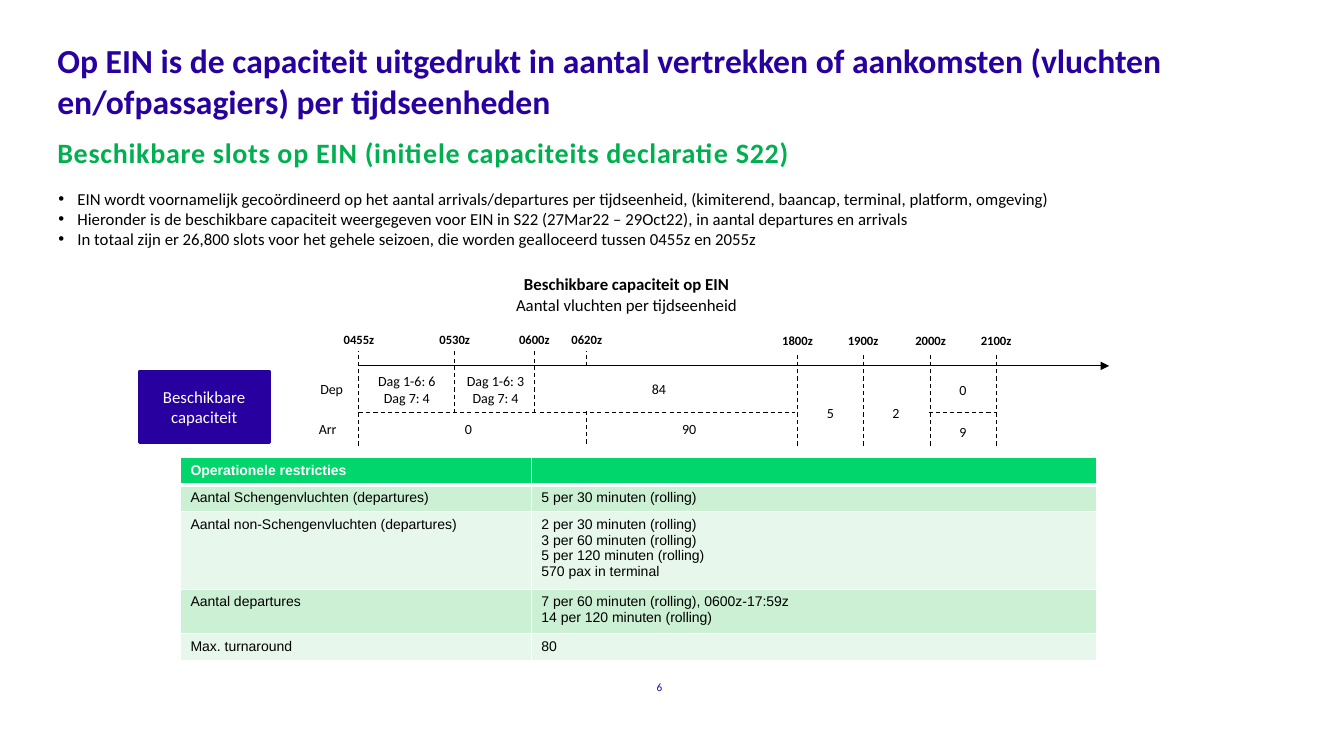
from lxml import etree
from pptx import Presentation
from pptx.dml.color import RGBColor
from pptx.enum.dml import MSO_LINE
from pptx.enum.shapes import MSO_CONNECTOR, MSO_SHAPE
from pptx.enum.text import MSO_ANCHOR, PP_ALIGN
from pptx.oxml.ns import qn
from pptx.util import Inches, Pt

LEFT, CENTER = PP_ALIGN.LEFT, PP_ALIGN.CENTER
TOP, MIDDLE = MSO_ANCHOR.TOP, MSO_ANCHOR.MIDDLE
DASH = MSO_LINE.DASH
STRAIGHT = MSO_CONNECTOR.STRAIGHT
RECTANGLE = MSO_SHAPE.RECTANGLE

INDIGO = RGBColor(0x28, 0x00, 0xA0)
GREEN = RGBColor(0x00, 0xB0, 0x50)
HEADER_GREEN = RGBColor(0x00, 0xD6, 0x6C)
BAND_DARK = RGBColor(0xCC, 0xF0, 0xD4)
BAND_LIGHT = RGBColor(0xE7, 0xF7, 0xEB)
BLACK = RGBColor(0x00, 0x00, 0x00)
WHITE = RGBColor(0xFF, 0xFF, 0xFF)

presentation = Presentation()
presentation.slide_width = Inches(13.33)
presentation.slide_height = Inches(7.5)
slide = presentation.slides.add_slide(presentation.slide_layouts[6])


def add_text(text, left, top, width, height, size=10, color=BLACK,
             bold=False, align=CENTER, anchor=TOP):
    box = slide.shapes.add_textbox(Inches(left), Inches(top), Inches(width), Inches(height))
    frame = box.text_frame
    frame.word_wrap = True
    frame.vertical_anchor = anchor
    frame.text = text
    for paragraph in frame.paragraphs:
        paragraph.alignment = align
        for run in paragraph.runs:
            run.font.name = "Calibri"
            run.font.size = Pt(size)
            run.font.bold = bold
            run.font.color.rgb = color
    return frame


def add_line(x1, y1, x2, y2, dashed=True):
    line = slide.shapes.add_connector(STRAIGHT, Inches(x1), Inches(y1), Inches(x2), Inches(y2))
    line.line.color.rgb = BLACK
    line.line.width = Pt(0.75)
    if dashed:
        line.line.dash_style = DASH
    etree.SubElement(line._element.spPr, qn("a:effectLst"))
    return line


# Title, subtitle and page number
add_text("Op EIN is de capaciteit uitgedrukt in aantal vertrekken of aankomsten "
         "(vluchten en/ofpassagiers) per tijdseenheden",
         0.47, 0.35, 12.39, 0.92, 24, INDIGO, True, LEFT)
subtitle = add_text("Beschikbare slots op EIN (initiele capaciteits declaratie S22)",
                    0.47, 1.28, 11.02, 0.4, 20, GREEN, True, LEFT, MIDDLE)
subtitle.margin_top = subtitle.margin_bottom = 0
subtitle.paragraphs[0].line_spacing = Pt(28.5)
subtitle.paragraphs[0].runs[0].font._element.set("spc", "50")
add_text("6", 5.59, 6.67, 1.9, 0.3, 8, INDIGO, anchor=MIDDLE)

# Bullets
bullets = add_text(
    "EIN wordt voornamelijk gecoördineerd op het aantal arrivals/departures per tijdseenheid, "
    "(kimiterend, baancap, terminal, platform, omgeving)\n"
    "Hieronder is de beschikbare capaciteit weergegeven voor EIN in S22 (27Mar22 – 29Oct22), "
    "in aantal departures en arrivals\n"
    "In totaal zijn er 26,800 slots voor het gehele seizoen, die worden gealloceerd "
    "tussen 0455z en 2055z",
    0.48, 1.82, 12.37, 0.71, 12, align=LEFT)
for paragraph in bullets.paragraphs:
    properties = paragraph._p.get_or_add_pPr()
    properties.set("marL", str(Inches(0.19)))
    properties.set("indent", str(-Inches(0.19)))
    etree.SubElement(properties, qn("a:buFont"), typeface="Arial")
    etree.SubElement(properties, qn("a:buChar"), char="•")

# Timeline heading
heading = add_text("Beschikbare capaciteit op EIN\nAantal vluchten per tijdseenheid",
                   4.91, 2.72, 2.61, 0.4, 12)
heading.margin_left = heading.margin_right = heading.margin_top = heading.margin_bottom = 0
heading.paragraphs[0].runs[0].font.bold = True

# Time axis
axis = add_line(3.56, 3.63, 11, 3.63, dashed=False)
etree.SubElement(axis.line._get_or_add_ln(), qn("a:tailEnd"), type="triangle")

# Time marks: label, x, label top, bottom of the dashed line
time_marks = [
    ("0455z", 3.56, 3.24, 4.42), ("0530z", 4.51, 3.24, 4.1),
    ("0600z", 5.3, 3.24, 4.1), ("0620z", 5.82, 3.24, 3.63),
    ("1800z", 7.91, 3.25, 4.42), ("1900z", 8.56, 3.25, 4.42),
    ("2000z", 9.23, 3.25, 4.42), ("2100z", 9.88, 3.25, 4.42),
]
for label, x, label_top, line_bottom in time_marks:
    add_text(label, x - 0.77, label_top, 1.54, 0.25, 9, bold=True)
    add_line(x, line_bottom, x, label_top + 0.24)

# Lines between departures and arrivals
add_line(5.82, 4.4, 5.82, 4.08)
add_line(3.56, 4.09, 7.89, 4.09)
add_line(9.21, 4.09, 9.88, 4.09)

# Capacity values: text, left, top, width
capacity_values = [
    ("Dep", 3.02, 3.73, 0.54), ("Arr", 2.98, 4.12, 0.54),
    ("Dag 1-6: 6\nDag 7: 4", 3.28, 3.65, 1.51),
    ("Dag 1-6: 3\nDag 7: 4", 4.16, 3.65, 1.51),
    ("84", 5.78, 3.73, 1.51), ("0", 3.89, 4.12, 1.51), ("90", 6.08, 4.12, 1.51),
    ("5", 7.91, 3.96, 0.65), ("2", 8.58, 3.96, 0.61),
    ("0", 9.27, 3.74, 0.56), ("9", 9.27, 4.15, 0.56),
]
for text, left, top, width in capacity_values:
    add_text(text, left, top, width, 0.44 if "\n" in text else 0.27)

# Capacity block
block = slide.shapes.add_shape(RECTANGLE, Inches(1.38), Inches(3.68), Inches(1.29), Inches(0.71))
block.shadow.inherit = False
block.fill.solid()
block.fill.fore_color.rgb = INDIGO
block.line.color.rgb = INDIGO
block.line.width = Pt(2)
block.text_frame.word_wrap = True
block.text_frame.vertical_anchor = MIDDLE
block.text_frame.text = "Beschikbare capaciteit"
paragraph = block.text_frame.paragraphs[0]
paragraph.alignment = CENTER
paragraph.runs[0].font.name = "Calibri"
paragraph.runs[0].font.size = Pt(12)
paragraph.runs[0].font.color.rgb = WHITE

# Restrictions table
restrictions = [
    ("Operationele restricties", ""),
    ("Aantal Schengenvluchten (departures)", "5 per 30 minuten (rolling)"),
    ("Aantal non-Schengenvluchten (departures)",
     "2 per 30 minuten (rolling)\n3 per 60 minuten (rolling)\n"
     "5 per 120 minuten (rolling)\n570 pax in terminal"),
    ("Aantal departures", "7 per 60 minuten (rolling), 0600z-17:59z\n14 per 120 minuten (rolling)"),
    ("Max. turnaround", "80"),
]
row_heights = [0.27, 0.26, 0.76, 0.44, 0.27]
table = slide.shapes.add_table(5, 2, Inches(1.79), Inches(4.54), Inches(9.09), Inches(2)).table
table.horz_banding = False
table.columns[0].width = Inches(3.48)
table.columns[1].width = Inches(5.61)
for row, (texts, height) in enumerate(zip(restrictions, row_heights)):
    table.rows[row].height = Inches(height)
    for column, text in enumerate(texts):
        cell = table.cell(row, column)
        cell.text = text
        for side in ("L", "R", "T", "B"):
            thick = (row, side) in ((0, "B"), (1, "T"))
            border = etree.SubElement(cell._tc.get_or_add_tcPr(), qn("a:ln" + side),
                                      w=str(Pt(3 if thick else 1)))
            border_fill = etree.SubElement(border, qn("a:solidFill"))
            etree.SubElement(border_fill, qn("a:srgbClr"), val=str(WHITE))
        cell.fill.solid()
        cell.fill.fore_color.rgb = (HEADER_GREEN if row == 0
                                    else BAND_DARK if row % 2 else BAND_LIGHT)
        for paragraph in cell.text_frame.paragraphs:
            for run in paragraph.runs:
                run.font.name = "Arial"
                run.font.size = Pt(10)
                run.font.bold = row == 0
                run.font.color.rgb = WHITE if row == 0 else BLACK
            if not paragraph.runs:
                etree.SubElement(paragraph._p, qn("a:endParaRPr"), sz="1000")

presentation.save("out.pptx")
